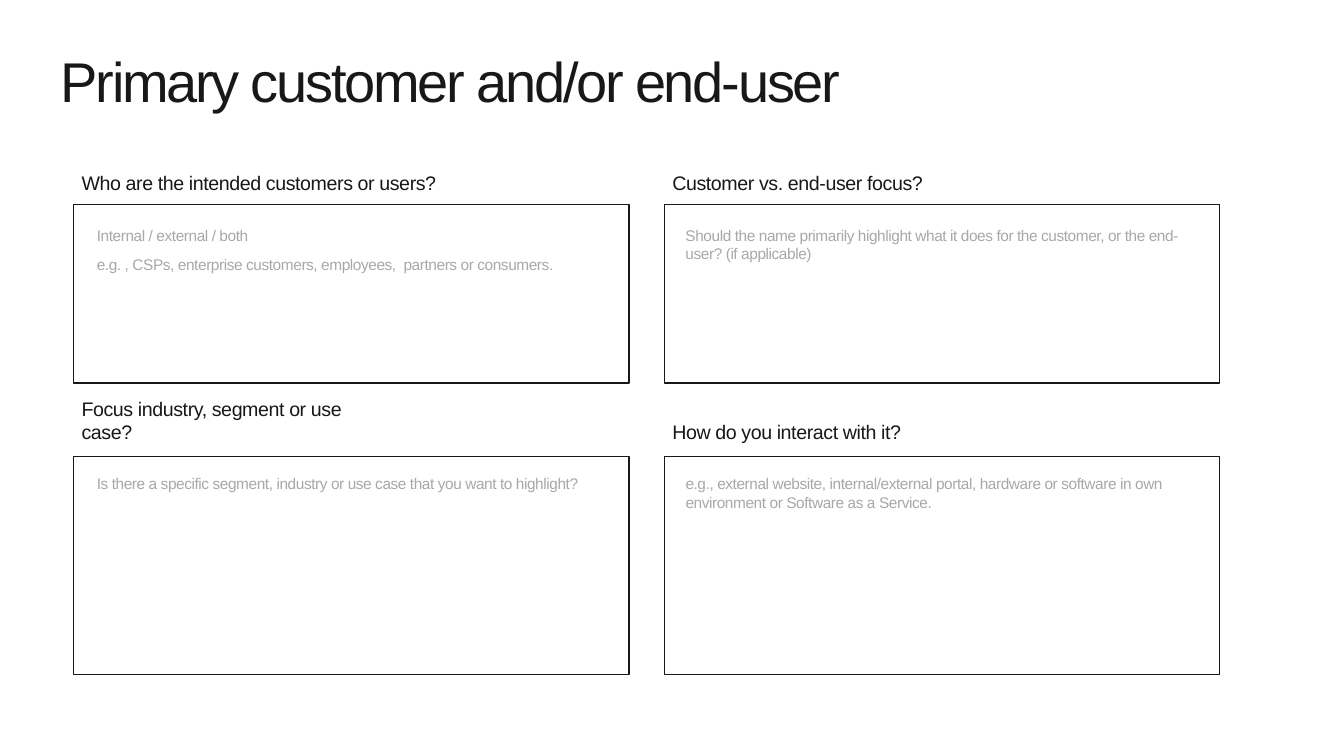
import dataclasses

import pptx
import pptx.dml.color
import pptx.enum.shapes
import pptx.enum.text
import pptx.util

Pt = pptx.util.Pt
RGB = pptx.dml.color.RGBColor


@dataclasses.dataclass(frozen=True)
class Theme:
    font: str = "Arial"
    ink: RGB = RGB(0x18, 0x18, 0x18)
    hint: RGB = RGB(0xA8, 0xA8, 0xA8)
    paper: RGB = RGB(0xFF, 0xFF, 0xFF)
    title_size: float = 40
    question_size: float = 14
    hint_size: float = 11
    title_tracking: float = -1.6
    body_tracking: float = -0.3
    paragraph_gap: float = 8
    side_inset: float = 5.76
    end_inset: float = 2.88


@dataclasses.dataclass(frozen=True)
class Area:
    left: float
    top: float
    width: float
    height: float


@dataclasses.dataclass(frozen=True)
class Column:
    left: float
    hint_indent: float


@dataclasses.dataclass(frozen=True)
class Row:
    question_top: float
    box_top: float
    box_height: float
    hint_top: float


@dataclasses.dataclass(frozen=True)
class Card:
    column: Column
    row: Row
    question: str
    question_width: float
    hints: tuple[str, ...]
    hint_width: float
    hint_height: float


THEME = Theme()
BOX_WIDTH = 396.75
QUESTION_HEIGHT = 25.2
LEFT = Column(52.5, 10.9)
RIGHT = Column(474.5, 9.4)
UPPER = Row(116.6, 146.2, 127.4, 158.4)
LOWER = Row(294.5, 326.2, 155.5, 335.9)

CARDS = (
    Card(LEFT, UPPER, "Who are the intended customers or users?", 301,
         ("Internal / external / both",
          "e.g. , CSPs, enterprise customers, employees,  partners or consumers."),
         373.7, 103.7),
    Card(RIGHT, UPPER, "Customer vs. end-user focus?", 330,
         ("Should the name primarily highlight what it does for the customer, "
          "or the end-user? (if applicable)",),
         369.4, 72),
    Card(LEFT, LOWER, "Focus industry, segment or use case?", 210,
         ("Is there a specific segment, industry or use case that you want to highlight?",),
         373.7, 132.5),
    Card(RIGHT, LOWER, "How do you interact with it?", 330,
         ("e.g., external website, internal/external portal, hardware or software "
          "in own environment or Software as a Service.",),
         375.1, 72),
)


def write_text(shape, lines: tuple[str, ...], size: float, color: RGB,
               tracking: float, anchor) -> None:
    frame = shape.text_frame
    frame.text = "\n".join(lines)
    frame.word_wrap = True
    frame.auto_size = pptx.enum.text.MSO_AUTO_SIZE.NONE
    frame.vertical_anchor = anchor
    frame.margin_left = frame.margin_right = Pt(THEME.side_inset)
    frame.margin_top = frame.margin_bottom = Pt(THEME.end_inset)
    for index, para in enumerate(frame.paragraphs):
        para.alignment = pptx.enum.text.PP_ALIGN.LEFT
        para.space_before = Pt(THEME.paragraph_gap if index else 0)
        for span in para.runs:
            span.font.name = THEME.font
            span.font.size = Pt(size)
            span.font.color.rgb = color
            span.font._element.set("spc", str(round(tracking * 100)))


def add_title(page, text: str, area: Area) -> None:
    title = page.shapes.title
    title.left, title.top = Pt(area.left), Pt(area.top)
    title.width, title.height = Pt(area.width), Pt(area.height)
    write_text(title, (text,), THEME.title_size, THEME.ink,
               THEME.title_tracking, pptx.enum.text.MSO_ANCHOR.TOP)
    title.text_frame.paragraphs[0].line_spacing = 0.85


def add_box(page, area: Area) -> None:
    box = page.shapes.add_shape(
        pptx.enum.shapes.MSO_SHAPE.RECTANGLE,
        Pt(area.left), Pt(area.top), Pt(area.width), Pt(area.height))
    box.shadow.inherit = False
    box.fill.background()
    box.line.color.rgb = THEME.ink
    box.line.width = Pt(1)


def add_text(page, area: Area, lines: tuple[str, ...], size: float,
             color: RGB, anchor) -> None:
    box = page.shapes.add_textbox(
        Pt(area.left), Pt(area.top), Pt(area.width), Pt(area.height))
    write_text(box, lines, size, color, THEME.body_tracking, anchor)


def add_card(page, card: Card) -> None:
    column, row = card.column, card.row
    add_box(page, Area(column.left, row.box_top, BOX_WIDTH, row.box_height))
    add_text(page,
             Area(column.left, row.question_top, card.question_width, QUESTION_HEIGHT),
             (card.question,), THEME.question_size, THEME.ink,
             pptx.enum.text.MSO_ANCHOR.BOTTOM)
    add_text(page,
             Area(column.left + column.hint_indent, row.hint_top,
                  card.hint_width, card.hint_height),
             card.hints, THEME.hint_size, THEME.hint,
             pptx.enum.text.MSO_ANCHOR.TOP)


def main() -> None:
    deck = pptx.Presentation()
    deck.slide_width, deck.slide_height = Pt(960), Pt(540)
    page = deck.slides.add_slide(deck.slide_layouts.get_by_name("Title Only"))
    page.background.fill.solid()
    page.background.fill.fore_color.rgb = THEME.paper
    add_title(page, "Primary customer and/or end-user", Area(37.5, 37.5, 820.8, 85))
    for card in CARDS:
        add_card(page, card)
    deck.save("out.pptx")


if __name__ == "__main__":
    main()
